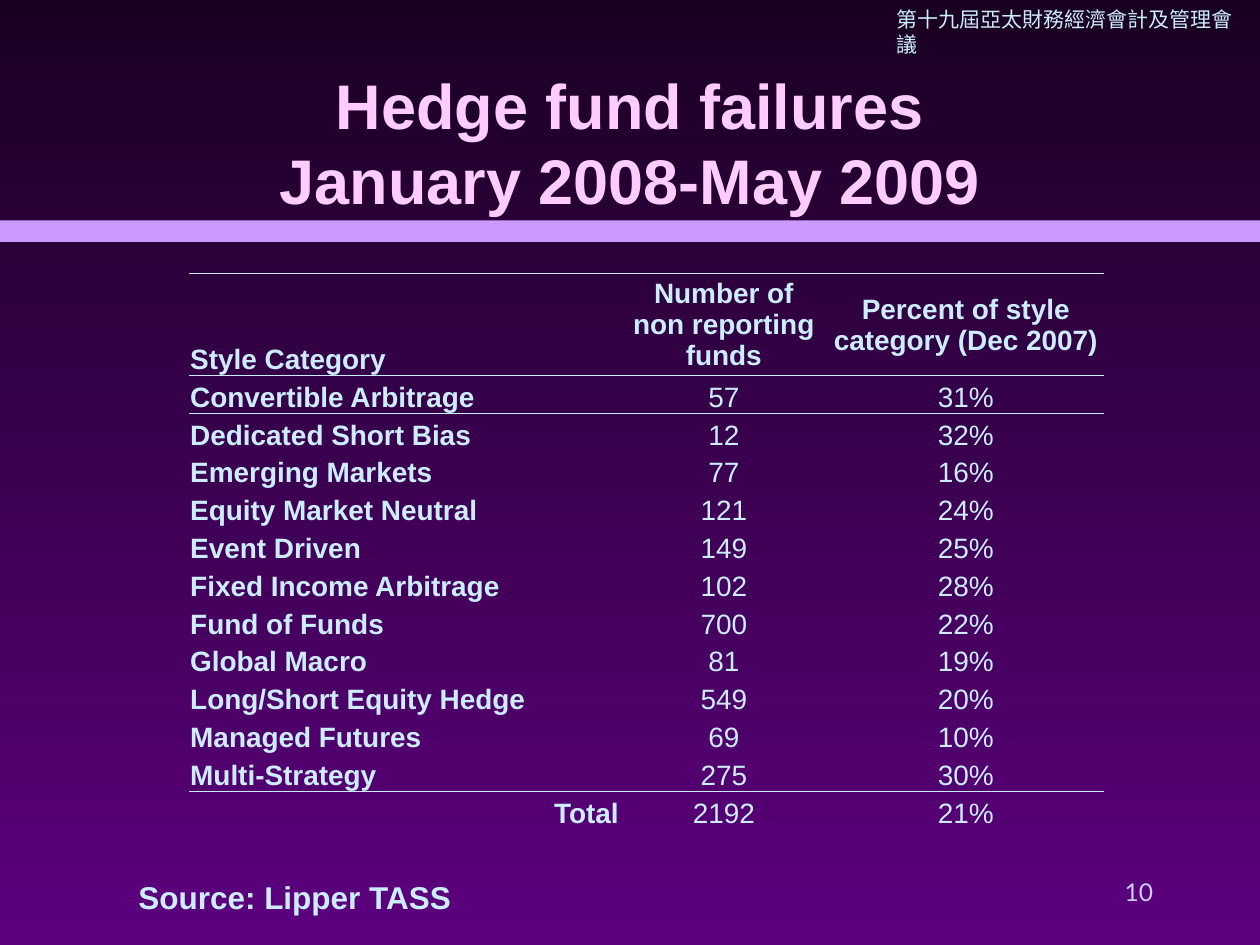
from lxml.etree import SubElement
from pptx import Presentation
from pptx.dml.color import RGBColor
from pptx.enum.shapes import MSO_SHAPE
from pptx.enum.text import MSO_ANCHOR, PP_ALIGN
from pptx.oxml.ns import qn
from pptx.util import Inches, Pt

COLOURS = {
    "night": "190022",
    "violet": "5D007E",
    "band": "CC99FF",
    "title": "FFCCFF",
    "body": "CCECFF",
    "number": "CCCCFF",
}
HEADINGS = ("Style Category", "Number of\vnon reporting funds",
            "Percent of style category (Dec 2007)")
STYLES = [
    ("Convertible Arbitrage", "57", "31%"),
    ("Dedicated Short Bias", "12", "32%"),
    ("Emerging Markets", "77", "16%"),
    ("Equity Market Neutral", "121", "24%"),
    ("Event Driven", "149", "25%"),
    ("Fixed Income Arbitrage", "102", "28%"),
    ("Fund of Funds", "700", "22%"),
    ("Global Macro", "81", "19%"),
    ("Long/Short Equity Hedge", "549", "20%"),
    ("Managed Futures", "69", "10%"),
    ("Multi-Strategy", "275", "30%"),
]
TOTAL = ("Total", "2192", "21%")
COLUMN_WIDTHS = (3.42, 1.65, 2.19)
HEADING_HEIGHT, ROW_HEIGHT = 0.75, 0.3
NO_TABLE_STYLE = "{2D5ABB26-0587-4C30-8999-92F81FD0307C}"


def colour(name):
    return RGBColor.from_string(COLOURS[name])


def apply(target, values):
    for attribute, value in values.items():
        setattr(target, attribute, value)


def style_paragraph(paragraph, ink, align=PP_ALIGN.LEFT, **font):
    paragraph.alignment = align
    for run in paragraph.runs:
        apply(run.font, font)
        run.font.color.rgb = colour(ink)


def paint_background(slide):
    fill = slide.background.fill
    fill.gradient()
    fill.gradient_angle = 270
    for stop, name in zip(fill.gradient_stops, ("night", "violet")):
        stop.color.rgb = colour(name)


def add_band(slide, *box):
    band = slide.shapes.add_shape(MSO_SHAPE.RECTANGLE, *map(Inches, box))
    band.shadow.inherit = False
    band.fill.solid()
    band.fill.fore_color.rgb = colour("band")
    band.line.fill.background()


def add_text(slide, box, text, ink, anchor=MSO_ANCHOR.TOP, wrap=True, **style):
    frame = slide.shapes.add_textbox(*map(Inches, box)).text_frame
    apply(frame, {"word_wrap": wrap, "vertical_anchor": anchor})
    paragraph = frame.paragraphs[0]
    paragraph.text = text
    style_paragraph(paragraph, ink, **style)
    return paragraph


def add_border(cell, side):
    border = SubElement(cell._tc.get_or_add_tcPr(), qn(f"a:ln{side}"), w=str(Pt(1)))
    fill = SubElement(border, qn("a:solidFill"))
    SubElement(fill, qn("a:srgbClr"), val=COLOURS["body"])


def fill_cell(cell, text, sides, anchor, align, bold):
    apply(cell, {
        "margin_left": Inches(0.01),
        "margin_right": Inches(0.01),
        "margin_top": Inches(0.01),
        "margin_bottom": 0,
        "vertical_anchor": anchor,
    })
    for side in sides:
        add_border(cell, side)
    cell.fill.background()
    paragraph = cell.text_frame.paragraphs[0]
    paragraph.text = text
    style_paragraph(paragraph, "body", align, name="Arial", size=Pt(16), bold=bold)


def add_failures_table(slide):
    records = [HEADINGS, *STYLES, TOTAL]
    last = len(records) - 1
    borders = {0: "TB", 1: "T", last - 1: "B", last: "T"}
    height = HEADING_HEIGHT + last * ROW_HEIGHT
    box = (1.5, 2.17, sum(COLUMN_WIDTHS), height)
    table = slide.shapes.add_table(
        len(records), len(HEADINGS), *map(Inches, box)).table
    apply(table, {"first_row": False, "horz_banding": False})
    table._tbl.tblPr.find(qn("a:tableStyleId")).text = NO_TABLE_STYLE
    for column, width in zip(table.columns, COLUMN_WIDTHS):
        column.width = Inches(width)
    for r, record in enumerate(records):
        table.rows[r].height = Inches(ROW_HEIGHT if r else HEADING_HEIGHT)
        label_align = PP_ALIGN.RIGHT if r == last else PP_ALIGN.LEFT
        for c, text in enumerate(record):
            heading = r == 0
            anchor = MSO_ANCHOR.MIDDLE if heading and c else MSO_ANCHOR.BOTTOM
            align = PP_ALIGN.CENTER if c else label_align
            fill_cell(table.cell(r, c), text, borders.get(r, ""),
                      anchor, align, heading or c == 0)


def main():
    deck = Presentation()
    apply(deck, {"slide_width": Inches(10), "slide_height": Inches(7.5)})
    slide = deck.slides.add_slide(deck.slide_layouts[6])
    paint_background(slide)
    add_band(slide, 0, 1.75, 10, 0.17)
    add_text(slide, (7.02, 0, 2.98, 0.3), "第十九屆亞太財務經濟會計及管理會議",
             "body", wrap=False, name="Times New Roman", size=Pt(12))
    title = add_text(slide, (0.75, 0.5, 8.5, 1.25),
                     "Hedge fund failures\vJanuary 2008-May 2009", "title",
                     MSO_ANCHOR.MIDDLE, align=PP_ALIGN.CENTER,
                     name="Arial", size=Pt(36), bold=True)
    title._p.get_or_add_pPr().set("indent", str(Inches(-0.42)))
    add_failures_table(slide)
    add_text(slide, (7.17, 6.83, 2.08, 0.5), "10", "number", MSO_ANCHOR.MIDDLE,
             align=PP_ALIGN.RIGHT, name="Lato", size=Pt(14))
    add_text(slide, (1, 6.92, 4.5, 0.4), "Source: Lipper TASS", "body",
             name="Arial", size=Pt(18), bold=True)
    deck.save("out.pptx")


if __name__ == "__main__":
    main()
